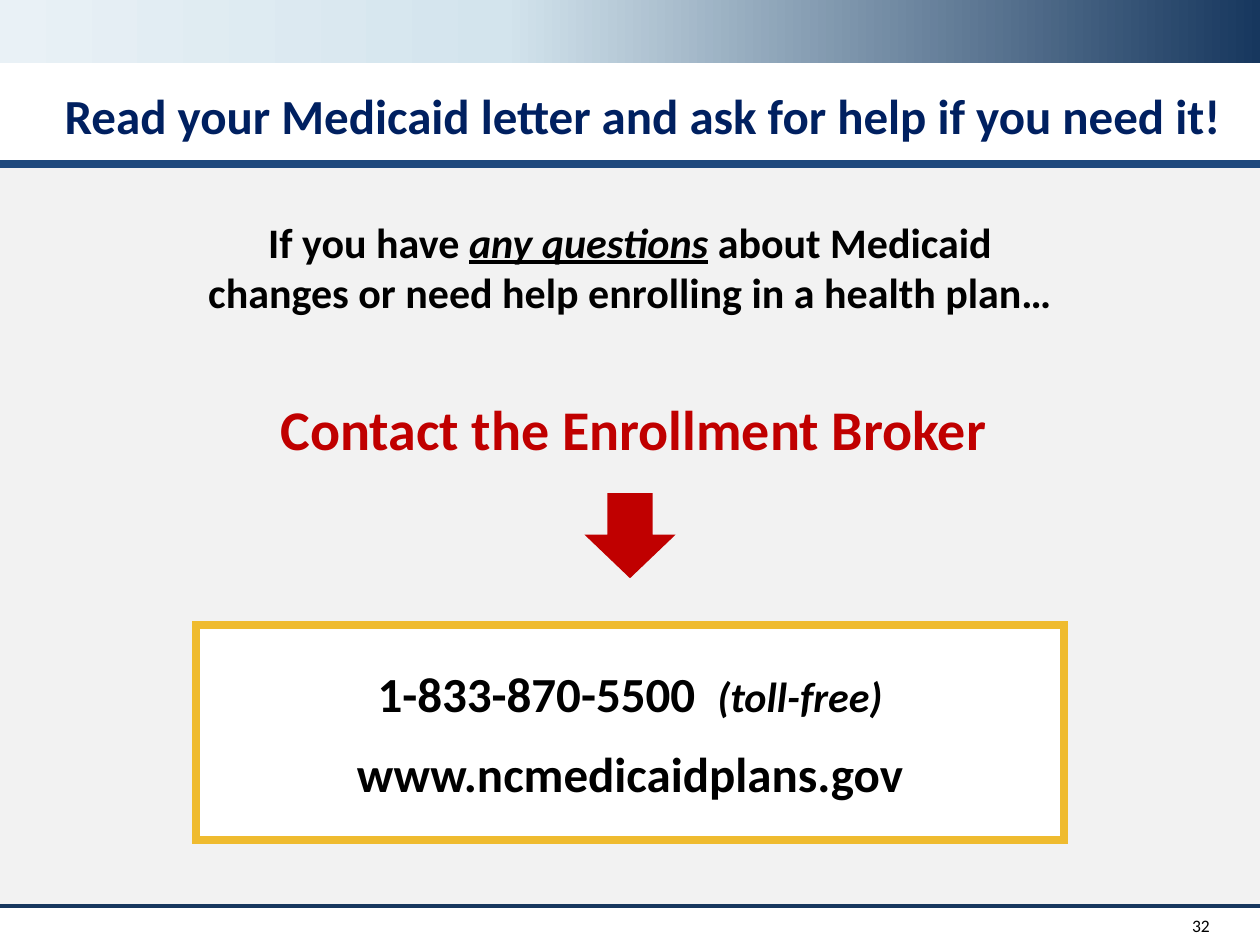
import copy

import pptx
import pptx.dml.color
import pptx.enum.shapes
import pptx.enum.text
import pptx.oxml.ns
import pptx.util
import lxml.etree

colour = pptx.dml.color.RGBColor.from_string
Shapes = pptx.enum.shapes.MSO_SHAPE
Align = pptx.enum.text.PP_ALIGN
Anchor = pptx.enum.text.MSO_ANCHOR
AutoSize = pptx.enum.text.MSO_AUTO_SIZE
Pt = pptx.util.Pt

presentation = pptx.Presentation()
presentation.slide_width = pptx.util.Inches(10)
presentation.slide_height = pptx.util.Inches(7.5)
slide = presentation.slides.add_slide(presentation.slide_layouts[6])


def place(left, top, width, height):
    """Turn percentages of the slide's width and height into lengths."""
    across, down = presentation.slide_width / 100, presentation.slide_height / 100
    return [round(length) for length in
            (left * across, top * down, width * across, height * down)]


def add_run(paragraph, text, size, hex_colour="000000", bold=True, italic=False, underline=False):
    run = paragraph.add_run()
    run.text = text
    run.font.name = "Calibri"
    run.font.size = Pt(size)
    run.font.color.rgb = colour(hex_colour)
    run.font.bold = bold
    run.font.italic = italic
    run.font.underline = underline


# Filled shapes: preset, place, fill, line colour, line width
shapes = {}
for name, preset, box, fill, line, width in [
    ("header band", Shapes.RECTANGLE, (0, 0, 100, 6.67), None, None, 0),
    ("body panel", Shapes.RECTANGLE, (0, 17.33, 100, 78.4), "F2F2F2", None, 0),
    ("contact box", Shapes.RECTANGLE, (15.55, 66.13, 68.9, 22.8), "FFFFFF", "EFBB2F", 4.5),
    ("down arrow", Shapes.DOWN_ARROW, (46.55, 52.27, 6.9, 8.8), "C00000", "C00000", 1),
]:
    shape = slide.shapes.add_shape(preset, *place(*box))
    shape.shadow.inherit = False
    if fill:
        shape.fill.solid()
        shape.fill.fore_color.rgb = colour(fill)
    if line:
        shape.line.color.rgb = colour(line)
        shape.line.width = Pt(width)
        outline = shape._element.spPr.find(pptx.oxml.ns.qn("a:ln"))
        lxml.etree.SubElement(outline, pptx.oxml.ns.qn("a:miter")).set("lim", "800000")
    else:
        shape.line.fill.background()
    shapes[name] = shape

# Header gradient, dark at the right; the middle stop is added in XML
band_fill = shapes["header band"].fill
band_fill.gradient()
band_fill.gradient_angle = 180
first, last = band_fill.gradient_stops
for stop, position, hex_colour in [(first, 0, "17375E"), (last, 1, "E9F1F6")]:
    stop.position = position
    stop.color.rgb = colour(hex_colour)
stop_list = band_fill._xPr.find(".//" + pptx.oxml.ns.qn("a:gsLst"))
middle = copy.deepcopy(stop_list[0])
middle.set("pos", "60000")
middle[0].set("val", "D3E4ED")
stop_list.insert(1, middle)

# Full-width rules under the title and above the footer
for top, hex_colour, width in [(17.33, "1F497D", 4.5), (95.87, "17375E", 2.25)]:
    left, level, right, _ = place(0, top, 100, 0)
    rule = slide.shapes.add_connector(
        pptx.enum.shapes.MSO_CONNECTOR.STRAIGHT, left, level, right, level)
    rule.line.color.rgb = colour(hex_colour)
    rule.line.width = Pt(width)
    lxml.etree.SubElement(rule._element.spPr, pptx.oxml.ns.qn("a:effectLst"))

# Contact details
frame = shapes["contact box"].text_frame
frame.word_wrap = True
frame.vertical_anchor = Anchor.MIDDLE
phone = frame.paragraphs[0]
website = frame.add_paragraph()
for paragraph in (phone, website):
    paragraph.alignment = Align.CENTER
    paragraph.space_after = Pt(12)
add_run(phone, "1-833-870-5500  ", 28)
add_run(phone, "(toll-free)", 24, italic=True)
add_run(website, "www.ncmedicaidplans.gov", 28)

# Text boxes
paragraphs = {}
for name, box, alignment, anchor, wrap, auto_size in [
    ("title", (4.15, 9.07, 94.2, 8), Align.LEFT, Anchor.TOP, True, AutoSize.NONE),
    ("question", (14.4, 22.22, 71.2, 12.13), Align.CENTER, Anchor.TOP, True,
     AutoSize.SHAPE_TO_FIT_TEXT),
    ("call to action", (21.3, 41.07, 58.6, 8.53), Align.LEFT, Anchor.TOP, False,
     AutoSize.SHAPE_TO_FIT_TEXT),
    ("slide number", (90.8, 95.87, 6.2, 4.13), Align.RIGHT, Anchor.MIDDLE, True, AutoSize.NONE),
]:
    frame = slide.shapes.add_textbox(*place(*box)).text_frame
    frame.word_wrap = wrap
    frame.auto_size = auto_size
    frame.vertical_anchor = anchor
    paragraphs[name] = frame.paragraphs[0]
    paragraphs[name].alignment = alignment

paragraphs["title"].line_spacing = 0.9
add_run(paragraphs["title"],
        "Read your Medicaid letter and ask for help if you need it!", 28, "002060")
add_run(paragraphs["question"], "If you have ", 24)
add_run(paragraphs["question"], "any questions", 24, italic=True, underline=True)
add_run(paragraphs["question"],
        " about Medicaid changes or need help enrolling in a health plan…", 24)
add_run(paragraphs["call to action"], "Contact the Enrollment Broker", 32, "C00000")
add_run(paragraphs["slide number"], "32", 10, bold=False)

presentation.save("out.pptx")
